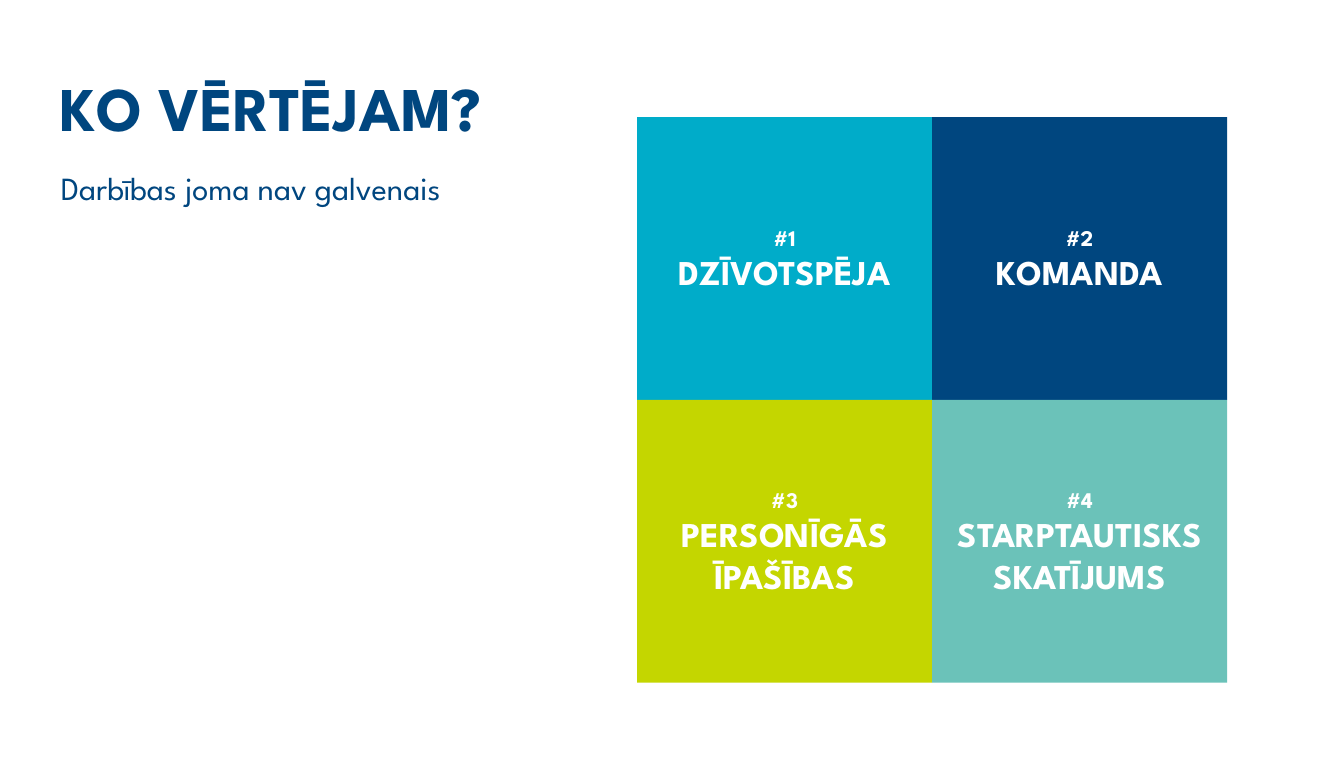
from pptx import Presentation
from pptx import util as u
from pptx.dml import color
from pptx.enum import shapes, text

COLORS = {"navy": "00467F", "cyan": "00ACC9", "lime": "C4D600",
          "teal": "6BC2B9", "white": "FFFFFF"}
CRITERIA = [("DZĪVOTSPĒJA", "cyan"), ("KOMANDA", "navy"),
            ("PERSONĪGĀS ĪPAŠĪBAS", "lime"), ("STARPTAUTISKS SKATĪJUMS", "teal")]


def rgb(name):
    return color.RGBColor.from_string(COLORS[name])


def write(p, words, size, shade, bold, align):
    p.alignment = align
    r = p.add_run()
    r.text = words
    font = {"name": "League Spartan", "size": u.Pt(size), "bold": bold}
    for key, value in font.items():
        setattr(r.font, key, value)
    r.font.color.rgb = rgb(shade)


prs = Presentation()
prs.slide_width, prs.slide_height = u.Cm(38.18), u.Cm(21.84)
s = prs.slides.add_slide(prs.slide_layouts[5])

title = s.shapes.title
place = {"left": 1.47, "top": 1.83, "width": 34.52, "height": 2.39}
for key, value in place.items():
    setattr(title, key, u.Cm(value))
tf = title.text_frame
frame = {"word_wrap": True, "auto_size": text.MSO_AUTO_SIZE.NONE,
         "vertical_anchor": text.MSO_ANCHOR.TOP}
for key, value in frame.items():
    setattr(tf, key, value)
write(tf.paragraphs[0], "KO VĒRTĒJAM?", 50, "navy", True, text.PP_ALIGN.LEFT)

subtitle = s.shapes.add_textbox(u.Cm(1.73), u.Cm(4.75), u.Cm(34.52), u.Cm(1.14))
tf = subtitle.text_frame
frame = {"word_wrap": True, "margin_left": 0, "margin_right": 0,
         "margin_top": u.Cm(0.03), "margin_bottom": 0}
for key, value in frame.items():
    setattr(tf, key, value)
write(tf.paragraphs[0], "Darbības joma nav galvenais", 26, "navy", False, text.PP_ALIGN.LEFT)

left, top, width, height = 18.1, 3.33, 8.38, 8.03
for i, (label, fill) in enumerate(CRITERIA):
    row, col = divmod(i, 2)
    sp = s.shapes.add_shape(shapes.MSO_SHAPE.RECTANGLE,
                            u.Cm(left + col * width), u.Cm(top + row * height),
                            u.Cm(width), u.Cm(height))
    sp.shadow.inherit = False
    sp.fill.solid()
    sp.fill.fore_color.rgb = rgb(fill)
    sp.line.fill.background()
    tf = sp.text_frame
    tf.word_wrap = True
    tf.vertical_anchor = text.MSO_ANCHOR.MIDDLE
    write(tf.paragraphs[0], f"#{i + 1}", 18, "white", True, text.PP_ALIGN.CENTER)
    write(tf.add_paragraph(), label, 28, "white", True, text.PP_ALIGN.CENTER)

prs.save("out.pptx")
